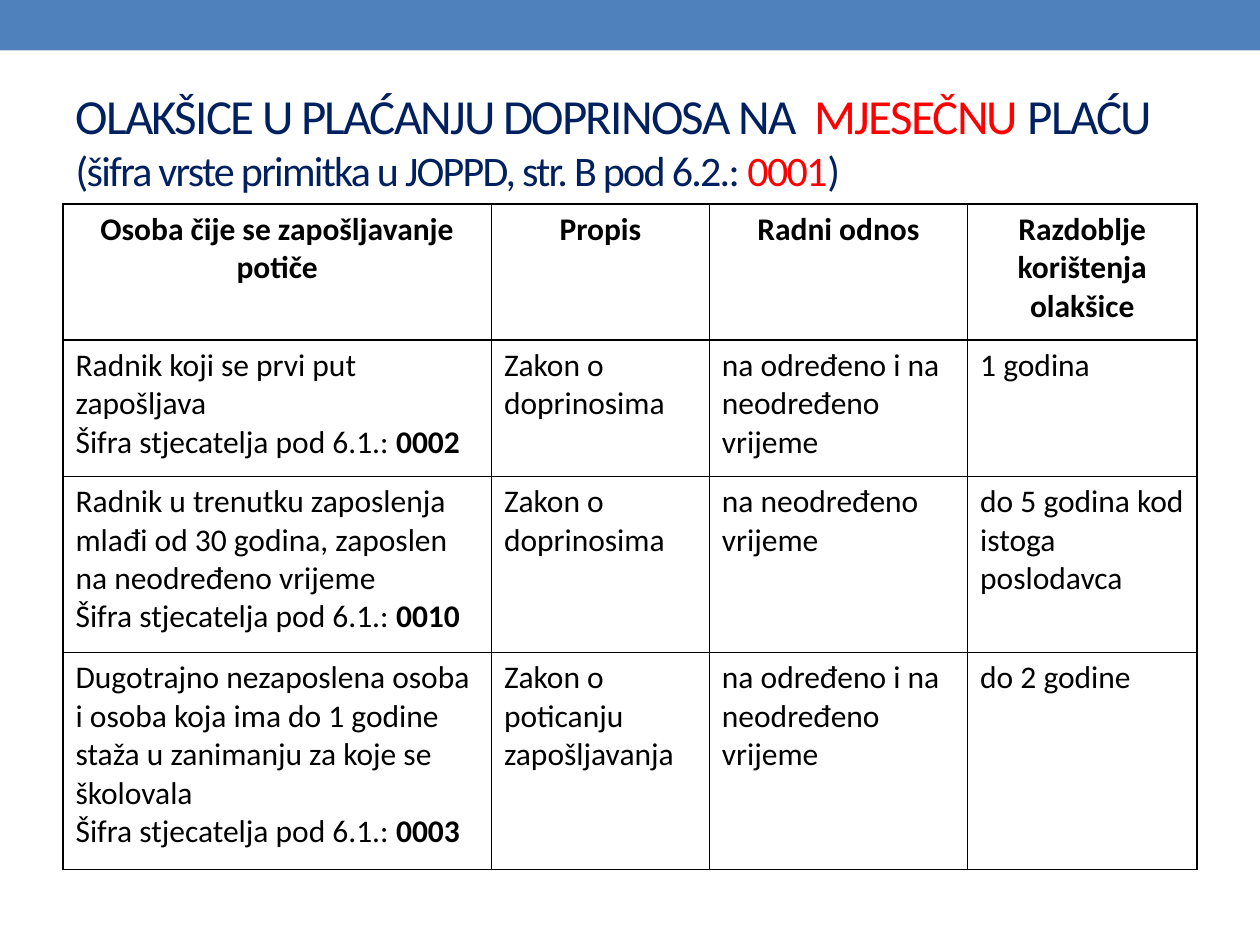
"""Build a slide on contribution reliefs for a monthly salary."""
from copy import deepcopy

from lxml import etree
from pptx import Presentation
from pptx.dml.color import RGBColor
from pptx.enum.shapes import MSO_SHAPE
from pptx.enum.text import MSO_ANCHOR, MSO_AUTO_SIZE, PP_ALIGN
from pptx.oxml.ns import qn
from pptx.util import Inches, Pt

RECTANGLE = MSO_SHAPE.RECTANGLE
MIDDLE = MSO_ANCHOR.MIDDLE
NO_FIT = MSO_AUTO_SIZE.NONE
LEFT, CENTER = PP_ALIGN.LEFT, PP_ALIGN.CENTER
COLORS = {"band": "4F81BD", "title": "002060", "accent": "FF0000", "text": "000000", "border": "000000"}

TITLE_LINES = [
    (28, [("OLAKŠICE U PLAĆANJU DOPRINOSA NA  ", "title"), ("MJESEČNU", "accent"), (" PLAĆU", "title")]),
    (24, [("(šifra vrste primitka u JOPPD, str. B pod 6.2.: ", "title"), ("0001", "accent"), (")", "title")]),
]
HEADERS = ["Osoba čije se zapošljavanje potiče", "Propis", "Radni odnos", "Razdoblje korištenja olakšice"]
CODE_LABEL = "Šifra stjecatelja pod 6.1.: "
RELIEFS = [
    ("Radnik koji se prvi put zapošljava", "0002",
     "Zakon o doprinosima", "na određeno i na neodređeno vrijeme", "1 godina"),
    ("Radnik u trenutku zaposlenja mlađi od 30 godina, zaposlen na neodređeno vrijeme", "0010",
     "Zakon o doprinosima", "na neodređeno vrijeme", "do 5 godina kod istoga poslodavca"),
    ("Dugotrajno nezaposlena osoba i osoba koja ima do 1 godine staža u zanimanju za koje se školovala", "0003",
     "Zakon o poticanju zapošljavanja", "na određeno i na neodređeno vrijeme", "do 2 godine"),
]
COLUMN_WIDTHS = [3.4, 1.73, 2.05, 1.82]
ROW_HEIGHTS = [1.08, 1.08, 1.4, 1.72]


class SlideBuilder:
    """Hold the text style and the current slide."""

    def __init__(self, slide, font="Calibri", text_size=18):
        self.slide = slide
        self.font = font
        self.text_size = text_size

    def style(self, run, size, color, bold=False):
        run.font.name = self.font
        run.font.size = Pt(size)
        run.font.bold = bold
        run.font.color.rgb = RGBColor.from_string(COLORS[color])

    def band(self, left, top, width, height):
        shape = self.slide.shapes.add_shape(
            RECTANGLE, Inches(left), Inches(top), Inches(width), Inches(height))
        shape.shadow.inherit = False
        shape.fill.solid()
        shape.fill.fore_color.rgb = RGBColor.from_string(COLORS["band"])
        shape.line.fill.background()

    def title(self, left, top, width, height, lines):
        title = self.slide.shapes.title
        title.left, title.top = Inches(left), Inches(top)
        title.width, title.height = Inches(width), Inches(height)
        frame = title.text_frame
        frame.vertical_anchor = MIDDLE
        frame.auto_size = NO_FIT
        paragraph = frame.paragraphs[0]
        paragraph.alignment = LEFT
        for index, (size, parts) in enumerate(lines):
            if index:
                paragraph.add_line_break()
                paragraph._p[-1].append(deepcopy(run.font._element))
            for text, color in parts:
                run = paragraph.add_run()
                run.text = text
                self.style(run, size, color)
                run.font._element.set("spc", "-100")

    def border(self, cell):
        properties = cell._tc.get_or_add_tcPr()
        for position, side in enumerate(("lnL", "lnR", "lnT", "lnB")):
            line = etree.Element(qn(f"a:{side}"), w=str(Pt(1)))
            fill = etree.SubElement(line, qn("a:solidFill"))
            etree.SubElement(fill, qn("a:srgbClr"), val=COLORS["border"])
            properties.insert(position, line)

    def cell(self, cell, text, code=None, header=False):
        cell.fill.background()
        self.border(cell)
        cell.text_frame.text = f"{text}\n{CODE_LABEL}" if code else text
        for paragraph in cell.text_frame.paragraphs:
            paragraph.alignment = CENTER if header else LEFT
            self.style(paragraph.runs[0], self.text_size, "text", header)
        if code:
            run = paragraph.add_run()
            run.text = code
            self.style(run, self.text_size, "text", True)

    def table(self, left, top, widths, heights, headers, reliefs):
        table = self.slide.shapes.add_table(
            len(heights), len(widths), Inches(left), Inches(top),
            Inches(sum(widths)), Inches(sum(heights))).table
        table.horz_banding = False
        for column, width in zip(table.columns, widths):
            column.width = Inches(width)
        for row, height in zip(table.rows, heights):
            row.height = Inches(height)
        for column, header in enumerate(headers):
            self.cell(table.cell(0, column), header, header=True)
        for row, (person, code, *details) in enumerate(reliefs, 1):
            self.cell(table.cell(row, 0), person, code)
            for column, detail in enumerate(details, 1):
                self.cell(table.cell(row, column), detail)


def main():
    presentation = Presentation()
    presentation.slide_width = Inches(10)
    presentation.slide_height = Inches(7.5)
    builder = SlideBuilder(presentation.slides.add_slide(presentation.slide_layouts[5]))
    builder.band(0, 0, 10, 0.4)
    builder.title(0.5, 0.48, 9, 1.26, TITLE_LINES)
    builder.table(0.5, 1.62, COLUMN_WIDTHS, ROW_HEIGHTS, HEADERS, RELIEFS)
    presentation.save("out.pptx")


if __name__ == "__main__":
    main()
